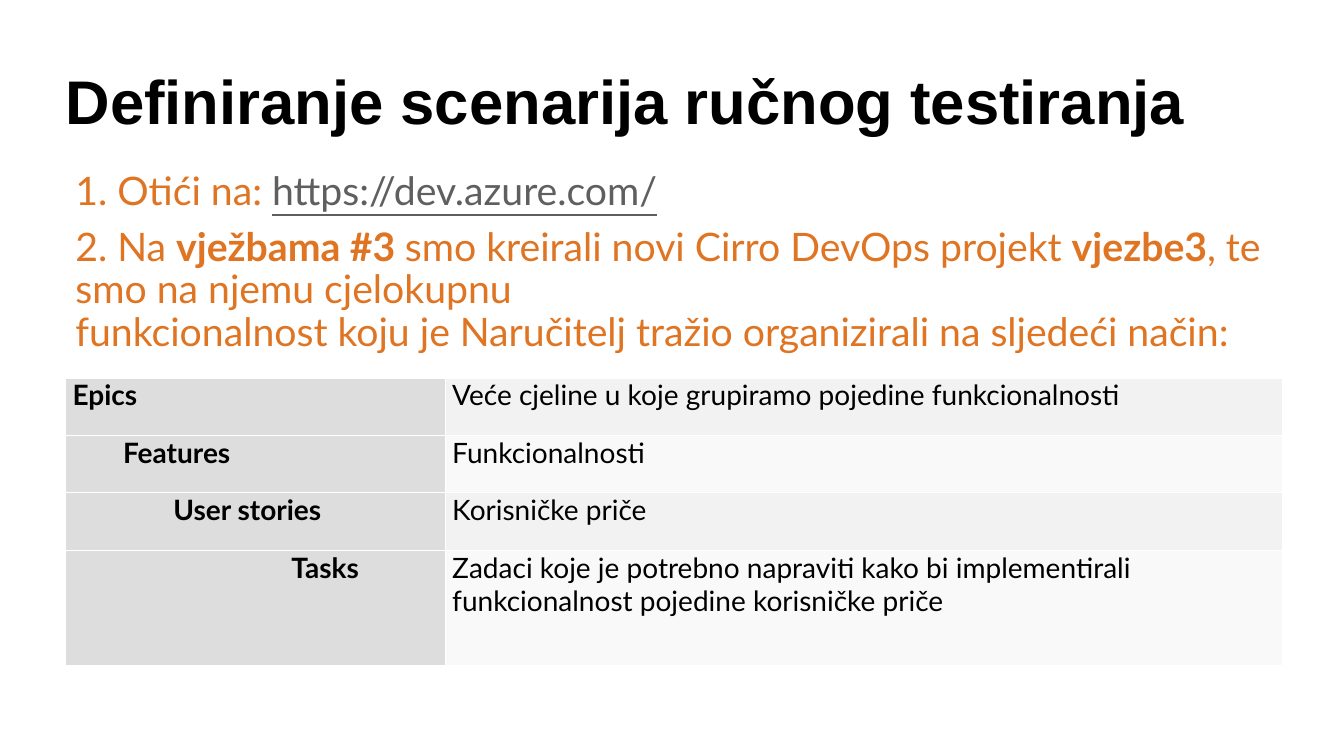
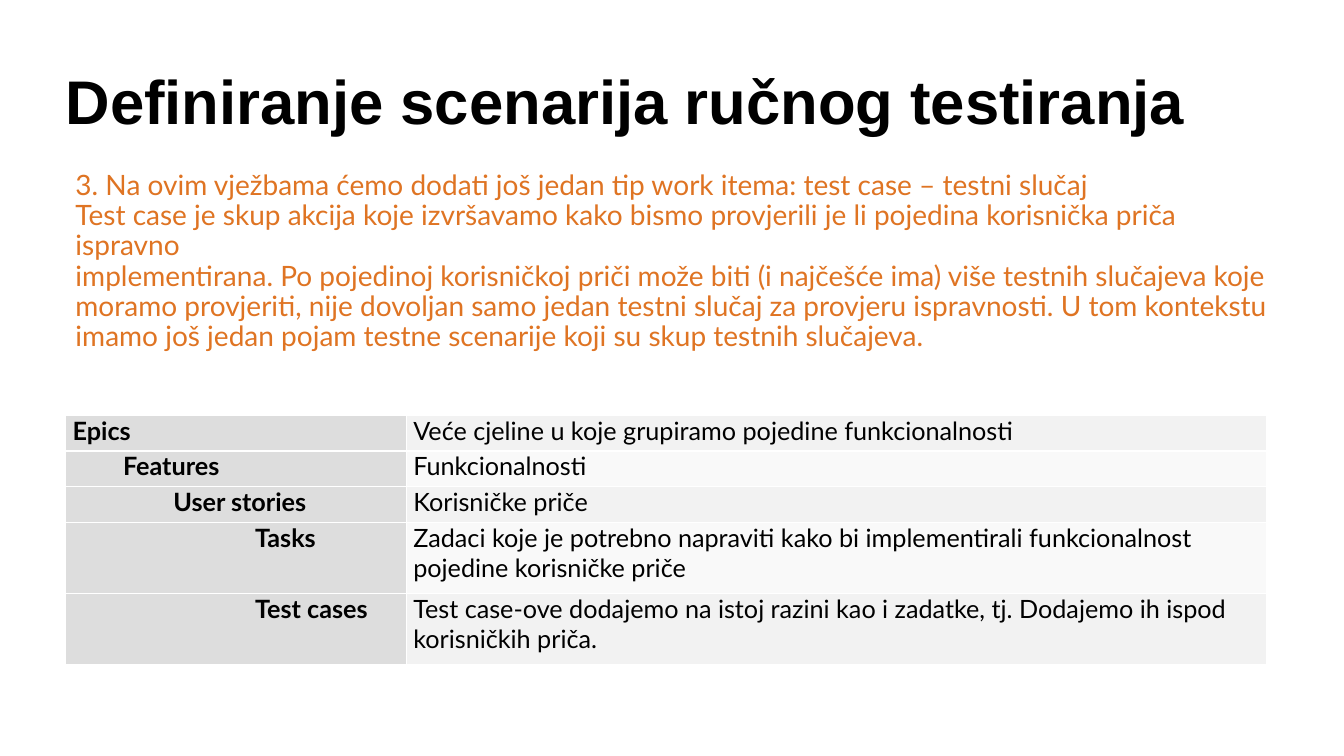
from lxml import etree
from pptx import Presentation, util as u
from pptx.dml.color import RGBColor
from pptx.enum import text
from pptx.oxml import ns

# Shared look; positions are percentages of the slide's size
WIDTH, HEIGHT = u.Inches(13.33), u.Inches(7.5)
LEFT, BOTTOM = 4.88, 88
COLORS = {"title": "000000", "body": "DF7423", "link": "5F5F5F",
          "cell": "000000", "label": "DDDDDD", "odd": "F2F2F2",
          "even": "F9F9F9", "border": "FFFFFF"}
TITLE = "Definiranje scenarija ručnog testiranja"
TITLE_FONT = {"name": "Arial", "size": u.Pt(44), "bold": True}
RUN_STYLES = {"plain": {}, "bold": {"bold": True}, "link": {"underline": True}}

# Work item levels: (name, indent level, description, row units)
ITEMS = [
    ("Epics", 0, "Veće cjeline u koje grupiramo pojedine funkcionalnosti", 1),
    ("Features", 1, "Funkcionalnosti", 1),
    ("User stories", 2, "Korisničke priče", 1),
    ("Tasks", 3, "Zadaci koje je potrebno napraviti kako bi implementirali "
     "funkcionalnost pojedine korisničke priče", 2),
]
TEST_CASES = ("Test cases", 3, "Test case-ove dodajemo na istoj razini kao i "
              "zadatke, tj. Dodajemo ih ispod korisničkih priča.", 2)

STEPS_1_2 = [
    [("1. Otići na: ", "plain"), ("https://dev.azure.com/", "link")],
    [("2. Na ", "plain"), ("vježbama #3 ", "bold"),
     ("smo kreirali novi Cirro DevOps projekt ", "plain"), ("vjezbe3", "bold"),
     (", te smo na njemu cjelokupnu\nfunkcionalnost koju je Naručitelj tražio "
      "organizirali na sljedeći način:", "plain")],
]
STEP_3 = [[(
    "3. Na ovim vježbama ćemo dodati još jedan tip work itema: test case – testni slučaj\n"
    "Test case je skup akcija koje izvršavamo kako bismo provjerili je li pojedina "
    "korisnička priča ispravno\n"
    "implementirana. Po pojedinoj korisničkoj priči može biti (i najčešće ima) više "
    "testnih slučajeva koje\n"
    "moramo provjeriti, nije dovoljan samo jedan testni slučaj za provjeru ispravnosti. "
    "U tom kontekstu\n"
    "imamo još jedan pojam testne scenarije koji su skup testnih slučajeva.", "plain")]]


def across(share):
    return int(WIDTH * share / 100)


def down(share):
    return int(HEIGHT * share / 100)


def rgb(key):
    return RGBColor.from_string(COLORS[key])


def set_all(target, values):
    for name, value in values.items():
        setattr(target, name, value)


def add_run(p, content, color, font):
    """Add text to a paragraph, turning newlines into line breaks."""
    for i, line in enumerate(content.split("\n")):
        if i:
            p.add_line_break()
        r = p.add_run()
        r.text = line
        set_all(r.font, font)
        r.font.color.rgb = rgb(color)


def add_text_frame(s, top, width, height, **frame):
    sp = s.shapes.add_textbox(across(LEFT), down(top), across(width), down(height))
    set_all(sp.text_frame, {"word_wrap": True, **frame})
    return sp.text_frame


def add_title(s):
    tf = add_text_frame(s, 7.33, 90.55, 11.6, margin_left=0,
                        vertical_anchor=text.MSO_ANCHOR.BOTTOM)
    p = tf.paragraphs[0]
    p.line_spacing = 0.9
    add_run(p, TITLE, "title", TITLE_FONT)


def add_body(s, paragraphs, size):
    tf = add_text_frame(s, 22, 90.5, 66)
    for i, runs in enumerate(paragraphs):
        p = tf.add_paragraph() if i else tf.paragraphs[0]
        p.line_spacing = 0.9
        if i:
            p.space_before = u.Pt(10)
        for content, style in runs:
            font = {"name": "Lato", "size": u.Pt(size), **RUN_STYLES[style]}
            add_run(p, content, "link" if style == "link" else "body", font)


def add_borders(cell):
    tc_pr = cell._tc.get_or_add_tcPr()
    for i, side in enumerate(("lnL", "lnR", "lnT", "lnB")):
        ln = etree.Element(ns.qn("a:" + side), w=str(u.Pt(1)))
        fill = etree.SubElement(ln, ns.qn("a:solidFill"))
        etree.SubElement(fill, ns.qn("a:srgbClr"), val=COLORS["border"])
        tc_pr.insert(i, ln)


def fill_cell(cell, content, fill, size, bold, indent=0):
    set_all(cell, {"margin_left": u.Inches(0.07), "margin_right": u.Inches(0.07),
                   "margin_top": 0, "margin_bottom": 0})
    cell.fill.solid()
    cell.fill.fore_color.rgb = rgb(fill)
    add_borders(cell)
    p = cell.text_frame.paragraphs[0]
    if indent:
        p._p.get_or_add_pPr().set("marL", str(u.Inches(indent)))
        p._p.get_or_add_pPr().set("indent", "0")
    add_run(p, content, "cell", {"name": "Lato", "size": u.Pt(size), "bold": bold})


def add_items(s, items, top, widths, size, deepest):
    """Add the work item table; `deepest` is the indent of the last level."""
    height = BOTTOM - top
    table = s.shapes.add_table(len(items), 2, across(LEFT), down(top),
                               across(sum(widths)), down(height)).table
    set_all(table, {"first_row": False, "horz_banding": False})
    for column, width in zip(table.columns, widths):
        column.width = across(width)
    unit = height / sum(item[3] for item in items)
    indents = (0, 0.5, 1, deepest)
    for i, (name, level, description, units) in enumerate(items):
        table.rows[i].height = down(unit * units)
        fill_cell(table.cell(i, 0), name, "label", size, True, indents[level])
        fill_cell(table.cell(i, 1), description, "even" if i % 2 else "odd", size, False)


def add_slide(prs, body, body_size, **table):
    s = prs.slides.add_slide(prs.slide_layouts[6])
    add_body(s, body, body_size)
    add_title(s)
    add_items(s, **table)


def main():
    prs = Presentation()
    set_all(prs, {"slide_width": WIDTH, "slide_height": HEIGHT})
    # Existing work items
    add_slide(prs, STEPS_1_2, 28, items=ITEMS, top=50,
              widths=(28.25, 62.3), size=20, deepest=2.17)
    # Work items with test cases
    add_slide(prs, STEP_3, 20, items=ITEMS + [TEST_CASES], top=54.93,
              widths=(25.35, 64), size=18, deepest=1.81)
    prs.save("out.pptx")


if __name__ == "__main__":
    main()
